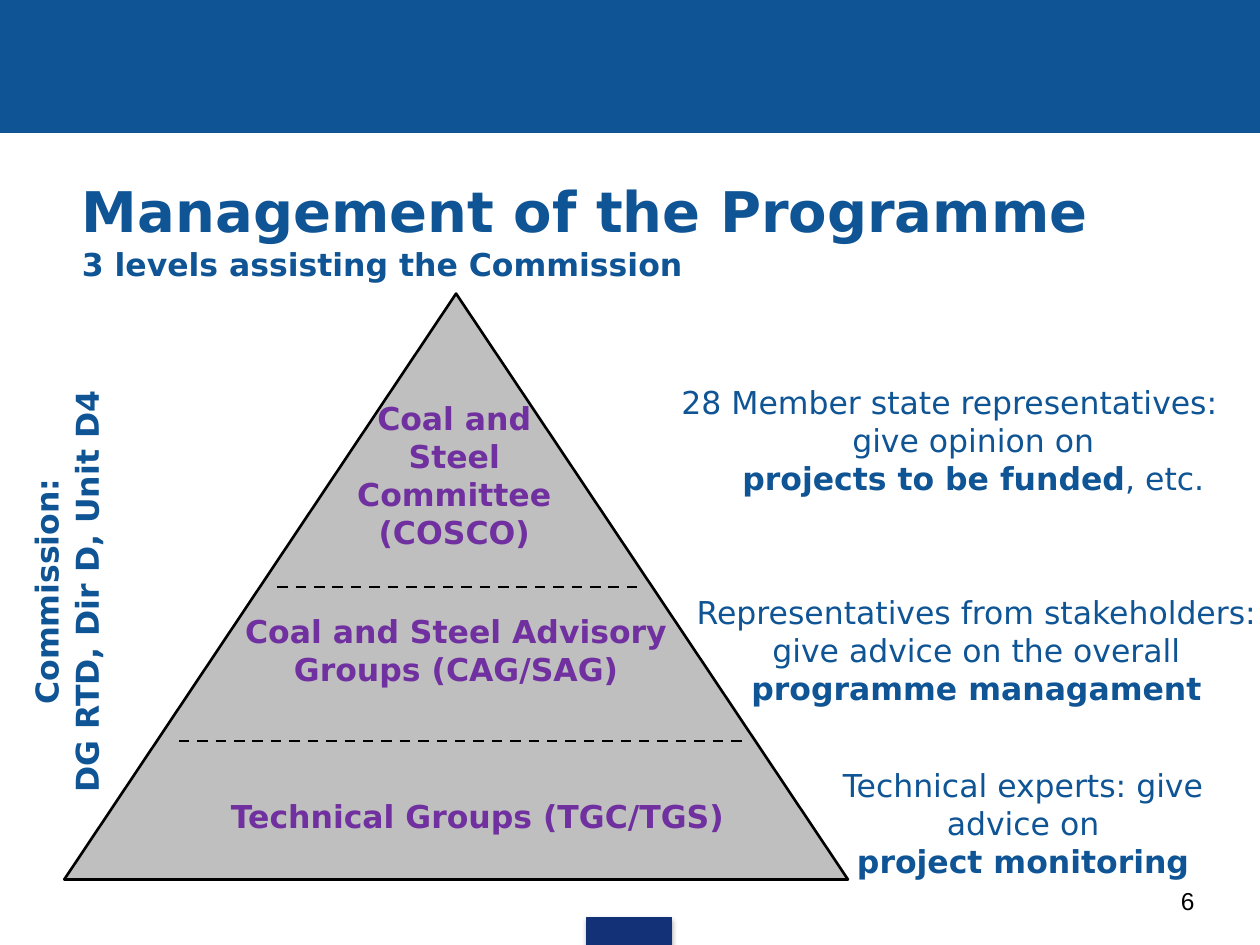
"""Build the slide on the three levels that assist the Commission."""
from lxml import etree
from pptx import Presentation
from pptx.dml.color import RGBColor
from pptx.enum.dml import MSO_LINE
from pptx.enum.shapes import MSO_CONNECTOR, MSO_SHAPE
from pptx.enum.text import MSO_ANCHOR, MSO_AUTO_SIZE, PP_ALIGN
from pptx.oxml.ns import qn
from pptx.util import Inches, Pt

BLUE = RGBColor(0x0F, 0x54, 0x94)
NAVY = RGBColor(0x13, 0x31, 0x76)
PURPLE = RGBColor(0x70, 0x30, 0xA0)
GREY = RGBColor(0xBF, 0xBF, 0xBF)
BLACK = RGBColor(0, 0, 0)
LEFT, CENTER, RIGHT = PP_ALIGN.LEFT, PP_ALIGN.CENTER, PP_ALIGN.RIGHT
TOP, NO_FIT, DASH = MSO_ANCHOR.TOP, MSO_AUTO_SIZE.NONE, MSO_LINE.DASH
RECTANGLE, TRIANGLE = MSO_SHAPE.RECTANGLE, MSO_SHAPE.ISOSCELES_TRIANGLE
STRAIGHT = MSO_CONNECTOR.STRAIGHT
TITLE_ONLY = 5

LEVELS = [
    ("Coal and Steel Committee\n(COSCO)", (2.6, 3.12, 2.01, 1.31)),
    ("Coal and Steel Advisory Groups (CAG/SAG)", (1.77, 4.81, 3.7, 0.7)),
    ("Technical Groups (TGC/TGS)", (1.27, 6.28, 5.04, 0.4)),
]
ROLES = [
    ("28 Member state representatives:\ngive opinion on\n*projects to be funded*, etc.",
     (5.31, 2.99, 4.83, 1.01)),
    ("Representatives from stakeholders:\ngive advice on the overall *programme managament*",
     (5.31, 4.66, 4.88, 1.01)),
    ("Technical experts: give advice on\n*project monitoring*",
     (6.31, 6.03, 3.62, 1.01)),
]
DIVIDERS = [(2.2, 5.12, 4.66), (1.42, 5.91, 5.88)]


def write_text(frame, text, size=18, color=BLUE, bold=False, align=CENTER,
               font="DejaVu Sans", spacing=None, gap=0):
    """Write one paragraph per line, with bold set on parts between asterisks."""
    frame.word_wrap = True
    frame.auto_size = NO_FIT
    frame.vertical_anchor = TOP
    for index, line in enumerate(text.split("\n")):
        para = frame.add_paragraph() if index else frame.paragraphs[0]
        para.alignment = align
        para.line_spacing = spacing
        para.space_before = Pt(gap if index else 0)
        for part, words in enumerate(line.split("*")):
            if words:
                span = para.add_run()
                span.text = words
                span.font.name = font
                span.font.size = Pt(size)
                span.font.bold = bold or part % 2 == 1
                span.font.color.rgb = color


def place(shape, left, top, width, height):
    """Set the position and size of a shape in inches."""
    shape.left, shape.top = Inches(left), Inches(top)
    shape.width, shape.height = Inches(width), Inches(height)


def add_text(page, text, bounds, **style):
    """Add a text box and return it."""
    box = page.shapes.add_textbox(*map(Inches, bounds))
    write_text(box.text_frame, text, **style)
    return box


def add_block(page, kind, bounds, fill, line, weight=0.75):
    """Add a filled preset shape without a shadow."""
    shape = page.shapes.add_shape(kind, *map(Inches, bounds))
    shape.shadow.inherit = False
    shape.fill.solid()
    shape.fill.fore_color.rgb = fill
    shape.line.color.rgb = line
    shape.line.width = Pt(weight)
    return shape


def add_soft_shadow(shape):
    """Give a shape a faint shadow that falls downwards."""
    effects = shape._element.spPr.find(qn("a:effectLst"))
    shadow = etree.SubElement(effects, qn("a:outerShdw"), blurRad=str(Pt(3.1)),
                              dist=str(Pt(1.8)), dir="5400000", rotWithShape="0")
    color = etree.SubElement(shadow, qn("a:srgbClr"), val="000000")
    etree.SubElement(color, qn("a:alpha"), val="35000")


def add_divider(page, start, end, level):
    """Add a dashed horizontal line between two pyramid levels."""
    line = page.shapes.add_connector(STRAIGHT, Inches(start), Inches(level),
                                     Inches(end), Inches(level))
    line.line.color.rgb = BLACK
    line.line.width = Pt(1.5)
    line.line.dash_style = DASH
    etree.SubElement(line._element.spPr, qn("a:effectLst"))


def add_title(page):
    """Fill the title placeholder with the heading and its subheading."""
    title = page.shapes.title
    place(title, 0.55, 1.41, 9.38, 0.9)
    frame = title.text_frame
    style = {"bold": True, "align": LEFT, "spacing": 0.9, "gap": 2.5}
    write_text(frame, "Management of the Programme\n3 levels assisting the Commission",
               **style)
    frame.paragraphs[0].runs[0].font.size = Pt(32)


def main():
    """Build and save the deck."""
    deck = Presentation()
    deck.slide_width, deck.slide_height = Inches(10), Inches(7.5)
    page = deck.slides.add_slide(deck.slide_layouts[TITLE_ONLY])
    add_block(page, RECTANGLE, (0, 0, 10, 1.05), BLUE, BLUE)
    add_soft_shadow(add_block(page, RECTANGLE, (4.66, 7.28, 0.67, 0.22), NAVY, NAVY))
    add_block(page, TRIANGLE, (0.51, 2.33, 6.22, 4.65), GREY, BLACK, weight=1.5)
    add_title(page)
    for text, bounds in LEVELS:
        add_text(page, text, bounds, color=PURPLE, bold=True)
    for text, bounds in ROLES:
        box = add_text(page, text, bounds)
        if text == ROLES[0][0]:
            box.text_frame.paragraphs[0].alignment = LEFT
    side = add_text(page, "Commission:\nDG RTD, Dir D, Unit D4", (-1.55, 4.16, 4.57, 1.07),
                    bold=True, spacing=0.9, gap=3.6)
    side.rotation = 270
    add_text(page, "6", (7.25, 6.98, 2.33, 0.52), size=14, color=BLACK,
             align=RIGHT, font="Arial")
    for start, end, level in DIVIDERS:
        add_divider(page, start, end, level)
    deck.save("out.pptx")


if __name__ == "__main__":
    main()
